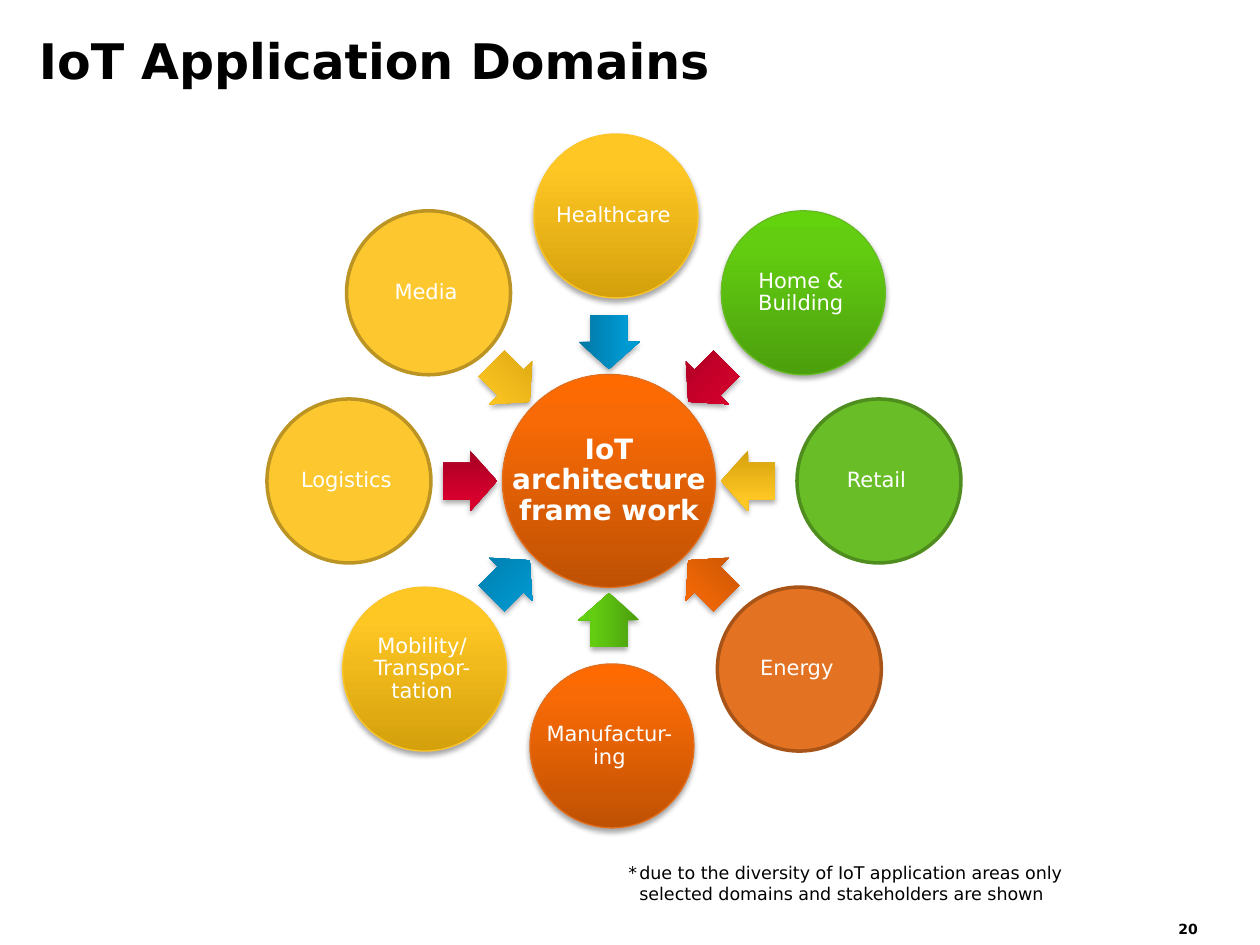
import math

import copy
import pptx
import pptx.dml.color
import pptx.enum.shapes
import pptx.enum.text
import pptx.oxml
import pptx.oxml.ns
import pptx.util

RGB = pptx.dml.color.RGBColor
SHAPE = pptx.enum.shapes.MSO_SHAPE
ALIGN = pptx.enum.text.PP_ALIGN
ANCHOR = pptx.enum.text.MSO_ANCHOR
qn = pptx.oxml.ns.qn

EMU_PER_PX = 914400 / 126
FONT = "DejaVu Sans"
BLACK = RGB(0x00, 0x00, 0x00)
WHITE = RGB(0xFF, 0xFF, 0xFF)

ORANGE_GLOW = (RGB(0xBF, 0x51, 0x04), RGB(0xF8, 0x6A, 0x05), RGB(0xFE, 0x69, 0x00))
BLUE_GLOW = (RGB(0x00, 0x77, 0xA3), RGB(0x00, 0x9A, 0xD3), RGB(0x00, 0x9B, 0xD4))
RED_GLOW = (RGB(0xA6, 0x00, 0x23), RGB(0xD7, 0x00, 0x2D), RGB(0xD8, 0x00, 0x2D))
YELLOW_GLOW = (RGB(0xD4, 0xA0, 0x0C), RGB(0xFF, 0xC7, 0x24), RGB(0xFF, 0xC7, 0x25))
GREEN_GLOW = (RGB(0x4C, 0x9F, 0x0D), RGB(0x63, 0xCE, 0x11), RGB(0x63, 0xD3, 0x0D))
GLOW_POSITIONS = (0, 0.8, 1)

ORANGE_EDGE = RGB(0xE3, 0x6F, 0x1D)
YELLOW_EDGE = RGB(0xFC, 0xC6, 0x29)
GREEN_EDGE = RGB(0x66, 0xBD, 0x23)
ORANGE, ORANGE_RIM = RGB(0xE3, 0x72, 0x22), RGB(0xA8, 0x54, 0x19)
YELLOW, YELLOW_RIM = RGB(0xFD, 0xC8, 0x2F), RGB(0xBB, 0x94, 0x23)
GREEN, GREEN_RIM = RGB(0x69, 0xBE, 0x28), RGB(0x4E, 0x8D, 0x1E)

HUB_X, HUB_Y, HUB_SIZE = 609, 481, 213
RING_X, RING_RADIUS, DOMAIN_SIZE, RING_LEAN = 614, 265, 164, 2
ARROW_RADIUS, ARROW_LENGTH, ARROW_WIDTH = 139, 54, 61
FIRST_MIRRORED = 5

DOMAINS = [
    (["Healthcare"], YELLOW_GLOW, YELLOW_EDGE, BLUE_GLOW),
    (["Home &", "Building"], GREEN_GLOW, GREEN_EDGE, RED_GLOW),
    (["Retail"], GREEN, GREEN_RIM, YELLOW_GLOW),
    (["Energy"], ORANGE, ORANGE_RIM, ORANGE_GLOW),
    (["Manufactur-", "ing"], ORANGE_GLOW, ORANGE_EDGE, GREEN_GLOW),
    (["Mobility/", "Transpor-", "tation"], YELLOW_GLOW, YELLOW_EDGE, BLUE_GLOW),
    (["Logistics"], YELLOW, YELLOW_RIM, RED_GLOW),
    (["Media"], YELLOW, YELLOW_RIM, YELLOW_GLOW),
]


def px(length):
    """Turn pixels into EMU."""
    return pptx.util.Emu(round(length * EMU_PER_PX))


def set_insets(frame, left=0, top=0, right=0, bottom=0):
    """Set the inner margins of a text frame in pixels."""
    frame.margin_left, frame.margin_top = px(left), px(top)
    frame.margin_right, frame.margin_bottom = px(right), px(bottom)


def write_lines(paragraph, lines, size, color, bold=False):
    """Add one formatted run per line, with breaks between them."""
    for number, line in enumerate(lines):
        if number:
            paragraph.add_line_break()
        run = paragraph.add_run()
        run.text = line
        run.font.name, run.font.size = FONT, pptx.util.Pt(size)
        run.font.bold, run.font.color.rgb = bold, color


def add_glow(shape, colors):
    """Fill a shape with an upward gradient and give it a soft shadow."""
    shape.fill.gradient()
    shape.fill.gradient_angle = 90
    properties = shape.element.spPr
    stops = properties.find(".//" + qn("a:gsLst"))
    stops.append(copy.deepcopy(stops[0]))
    for stop, color, position in zip(shape.fill.gradient_stops, colors, GLOW_POSITIONS):
        stop.color.rgb, stop.position = color, position
    properties.find(qn("a:effectLst")).append(pptx.oxml.parse_xml(
        f'<a:outerShdw {pptx.oxml.ns.nsdecls("a")} blurRad="39370" dist="22860" '
        'dir="5400000" rotWithShape="0"><a:srgbClr val="000000">'
        '<a:alpha val="35000"/></a:srgbClr></a:outerShdw>'))


def add_centred(slide, kind, x, y, width, height, fill):
    """Add a preset shape around a centre point."""
    shape = slide.shapes.add_shape(
        kind, px(x - width / 2), px(y - height / 2), px(width), px(height))
    shape.shadow.inherit = False
    if isinstance(fill, tuple) and not isinstance(fill, RGB):
        add_glow(shape, fill)
    else:
        shape.fill.solid()
        shape.fill.fore_color.rgb = fill
    return shape


def add_circle(slide, x, y, diameter, lines, fill, edge, size, bold=False, right=0):
    """Add a labelled circle; flat fills get the thick rim."""
    circle = add_centred(slide, SHAPE.OVAL, x, y, diameter, diameter, fill)
    circle.line.color.rgb = edge
    circle.line.width = pptx.util.Pt(2 if isinstance(fill, RGB) else 0.75)
    frame = circle.text_frame
    set_insets(frame, right=right)
    frame.word_wrap, frame.vertical_anchor = False, ANCHOR.MIDDLE
    label = frame.paragraphs[0]
    label.alignment, label.line_spacing = ALIGN.CENTER, 0.9
    write_lines(label, lines, size, WHITE, bold)


def add_arrow(slide, index, angle, glow):
    """Add a block arrow pointing from a domain to the hub."""
    mirrored = index >= FIRST_MIRRORED
    arrow = add_centred(
        slide, SHAPE.LEFT_ARROW if mirrored else SHAPE.RIGHT_ARROW,
        HUB_X + ARROW_RADIUS * math.sin(angle), HUB_Y - ARROW_RADIUS * math.cos(angle),
        ARROW_LENGTH, ARROW_WIDTH, glow)
    arrow.adjustments[0] = 0.6
    arrow.line.fill.background()
    arrow.rotation = 90 + math.degrees(angle) - (180 if mirrored else 0)


def add_domain(slide, index, angle, lines, fill, edge):
    """Add a domain circle on the ring, leaning slightly to the right at the top."""
    rise = round(math.cos(angle), 2)
    lean = RING_LEAN * ((rise > 0) - (rise < 0))
    add_circle(slide, RING_X + lean + RING_RADIUS * math.sin(angle),
               HUB_Y - RING_RADIUS * rise, DOMAIN_SIZE, lines, fill, edge, 12, right=5)


def add_title(slide, text):
    """Place and format the title placeholder."""
    title = slide.shapes.title
    title.left, title.top, title.width, title.height = px(39), px(0), px(1197), px(89)
    frame = title.text_frame
    set_insets(frame)
    frame.auto_size = pptx.enum.text.MSO_AUTO_SIZE.NONE
    frame.vertical_anchor = ANCHOR.BOTTOM
    frame.paragraphs[0].alignment = ALIGN.LEFT
    write_lines(frame.paragraphs[0], [text], 28, BLACK, True)


def add_note(slide, x, y, width, height, text, size, bold=False, hanging=0):
    """Add a wrapped text box with an optional hanging indent."""
    frame = slide.shapes.add_textbox(px(x), px(y), px(width), px(height)).text_frame
    frame.word_wrap = True
    paragraph = frame.paragraphs[0]
    if hanging:
        indents = paragraph._p.get_or_add_pPr()
        indents.set("marL", str(px(hanging)))
        indents.set("indent", str(-px(hanging)))
    write_lines(paragraph, [text], size, BLACK, bold)


def main():
    """Build the slide and save it."""
    deck = pptx.Presentation()
    deck.slide_width, deck.slide_height = px(1260), px(945)
    slide = deck.slides.add_slide(deck.slide_layouts[5])
    add_title(slide, "IoT Application Domains")
    add_circle(slide, HUB_X, HUB_Y, HUB_SIZE, ["IoT", "architecture", "frame work"],
               ORANGE_GLOW, ORANGE_EDGE, 16, True)
    for index, (lines, fill, edge, glow) in enumerate(DOMAINS):
        angle = math.tau * index / len(DOMAINS)
        add_arrow(slide, index, angle, glow)
        add_domain(slide, index, angle, lines, fill, edge)
    add_note(slide, 616, 856, 503, 55,
             "*\tdue to the diversity of IoT application areas only "
             "selected domains and stakeholders are shown", 10, hanging=11)
    add_note(slide, 1166, 914, 60, 31, "20", 8, bold=True)
    deck.save("out.pptx")


if __name__ == "__main__":
    main()
